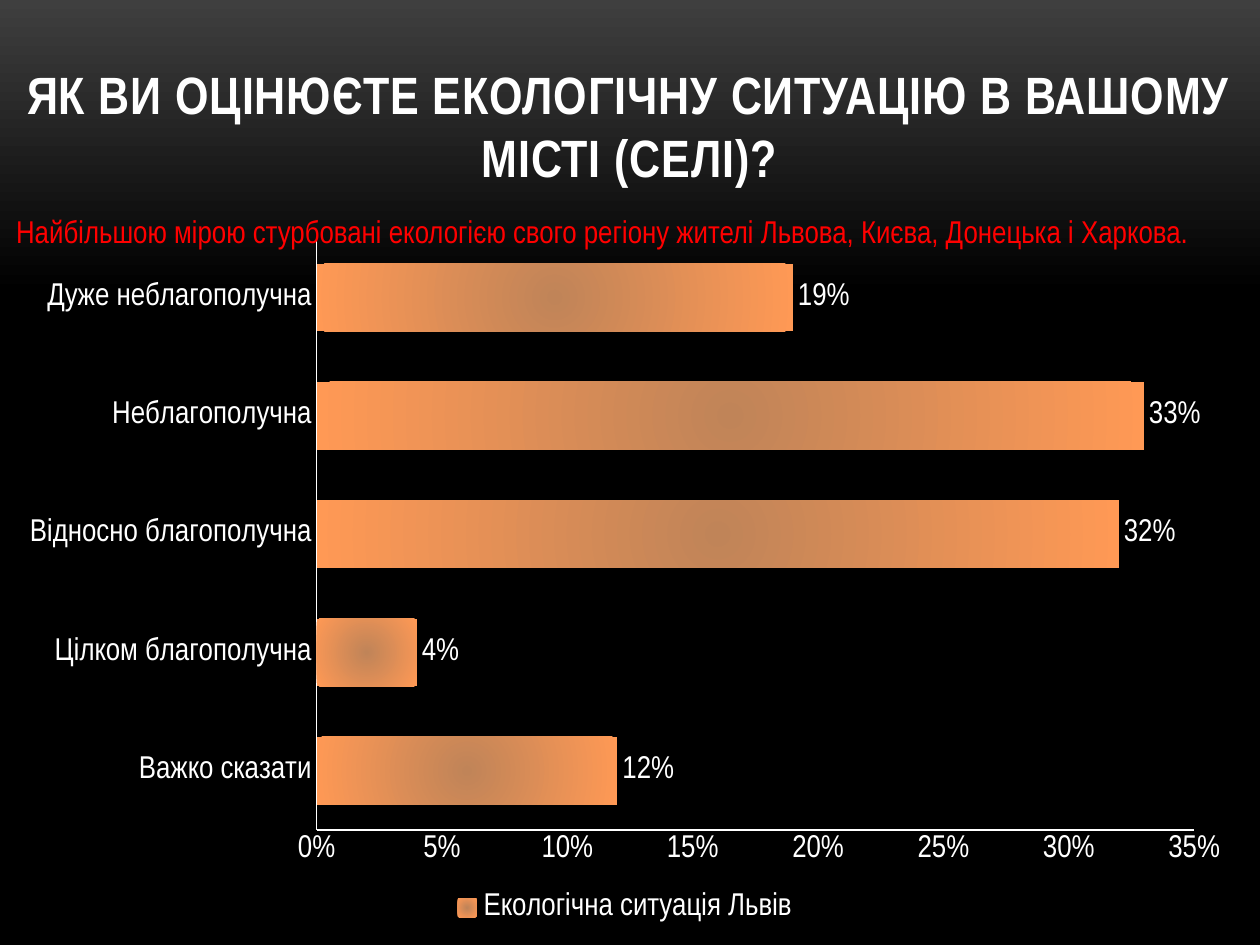
import pptx
import pptx.chart.data
import pptx.dml.color
import pptx.enum.chart
import pptx.enum.text
import pptx.oxml
import pptx.oxml.ns
import pptx.util
from pptx.util import Inches

FONT = "Arial Narrow"
COLORS = {
    "text": "FFFFFF",
    "note": "FF0000",
    "bg_top": "3F3F3F",
    "bg": "000000",
    "bar_center": "C08458",
    "bar_edge": "FF9955",
}
RATINGS = {
    "Важко сказати": 0.12,
    "Цілком благополучна": 0.04,
    "Відносно благополучна": 0.32,
    "Неблагополучна": 0.33,
    "Дуже неблагополучна": 0.19,
}


def rgb(name):
    """Return the named colour."""
    return pptx.dml.color.RGBColor.from_string(COLORS[name])


def style_font(font, size, color, bold=False):
    """Set the face, size, colour and weight of a font."""
    font.name = FONT
    font.size = pptx.util.Pt(size)
    font.bold = bold
    font.color.rgb = rgb(color)


def set_gradient(fill, stops):
    """Give a fill a two-stop gradient."""
    fill.gradient()
    for stop, (position, color) in zip(fill.gradient_stops, stops):
        stop.position = position
        stop.color.rgb = rgb(color)


def add_title(s, text):
    """Fill and place the title placeholder."""
    sp = s.shapes.title
    sp.left, sp.top = Inches(-0.01), Inches(0.29)
    sp.width, sp.height = Inches(10.01), Inches(1.25)
    tf = sp.text_frame
    tf.word_wrap = True
    tf.auto_size = pptx.enum.text.MSO_AUTO_SIZE.NONE
    tf.vertical_anchor = pptx.enum.text.MSO_ANCHOR.BOTTOM
    p = tf.paragraphs[0]
    p.alignment = pptx.enum.text.PP_ALIGN.CENTER
    r = p.add_run()
    r.text = text
    style_font(r.font, 30, "text", True)
    r.font._element.set("spc", "50")


def add_note(s, text):
    """Add the red remark above the chart."""
    sp = s.shapes.add_textbox(Inches(0.03), Inches(1.63), Inches(9.77), Inches(0.4))
    tf = sp.text_frame
    tf.word_wrap = True
    tf.auto_size = pptx.enum.text.MSO_AUTO_SIZE.SHAPE_TO_FIT_TEXT
    r = tf.paragraphs[0].add_run()
    r.text = text
    style_font(r.font, 18, "note")


def style_axis(axis):
    """Show a plain white axis line without ticks or gridlines."""
    axis.has_major_gridlines = False
    axis.major_tick_mark = pptx.enum.chart.XL_TICK_MARK.NONE
    axis.minor_tick_mark = pptx.enum.chart.XL_TICK_MARK.NONE
    axis.format.line.color.rgb = rgb("text")
    axis.format.line.width = pptx.util.Pt(0.75)


def fill_bars(series):
    """Fill the bars with a gradient that spreads from the centre."""
    set_gradient(series.format.fill, [(0, "bar_center"), (1, "bar_edge")])
    lin = series._element.find(".//" + pptx.oxml.ns.qn("a:lin"))
    radial = pptx.oxml.parse_xml(
        f'<a:path {pptx.oxml.ns.nsdecls("a")} path="circle">'
        '<a:fillToRect l="50000" t="50000" r="50000" b="50000"/></a:path>'
    )
    lin.getparent().replace(lin, radial)


def add_ratings_chart(s):
    """Add the bar chart of survey answers."""
    data = pptx.chart.data.CategoryChartData(number_format="0%")
    data.categories = list(RATINGS)
    data.add_series("Екологічна ситуація Львів", list(RATINGS.values()))
    chart = s.shapes.add_chart(
        pptx.enum.chart.XL_CHART_TYPE.BAR_CLUSTERED,
        Inches(0.04), Inches(1.78), Inches(9.84), Inches(5.59), data,
    ).chart
    style_font(chart.font, 18, "text")
    chart.has_title = False
    chart.has_legend = True
    chart.legend.position = pptx.enum.chart.XL_LEGEND_POSITION.BOTTOM
    chart.legend.include_in_layout = False
    style_axis(chart.category_axis)
    style_axis(chart.value_axis)
    chart.value_axis.minimum_scale = 0
    chart.value_axis.maximum_scale = 0.35
    chart.value_axis.major_unit = 0.05
    chart.value_axis.tick_labels.number_format = "0%"
    chart.value_axis.tick_labels.number_format_is_linked = False
    plot = chart.plots[0]
    plot.vary_by_categories = False
    plot.gap_width = 75
    plot.has_data_labels = True
    labels = plot.data_labels
    labels.show_value = True
    labels.number_format = "0%"
    labels.number_format_is_linked = False
    labels.position = pptx.enum.chart.XL_LABEL_POSITION.OUTSIDE_END
    style_font(labels.font, 18, "text")
    fill_bars(plot.series[0])


def main():
    """Build the survey slide."""
    prs = pptx.Presentation()
    prs.slide_width, prs.slide_height = Inches(10), Inches(7.5)
    s = prs.slides.add_slide(prs.slide_layouts[5])
    set_gradient(s.background.fill, [(0, "bg_top"), (0.31, "bg")])
    s.background.fill.gradient_angle = 270
    add_title(s, "ЯК ВИ ОЦІНЮЄТЕ ЕКОЛОГІЧНУ СИТУАЦІЮ В ВАШОМУ МІСТІ (СЕЛІ)?")
    add_ratings_chart(s)
    add_note(
        s,
        "Найбільшою мірою стурбовані екологією свого регіону "
        "жителі Львова, Києва, Донецька і Харкова.",
    )
    prs.save("out.pptx")


if __name__ == "__main__":
    main()
